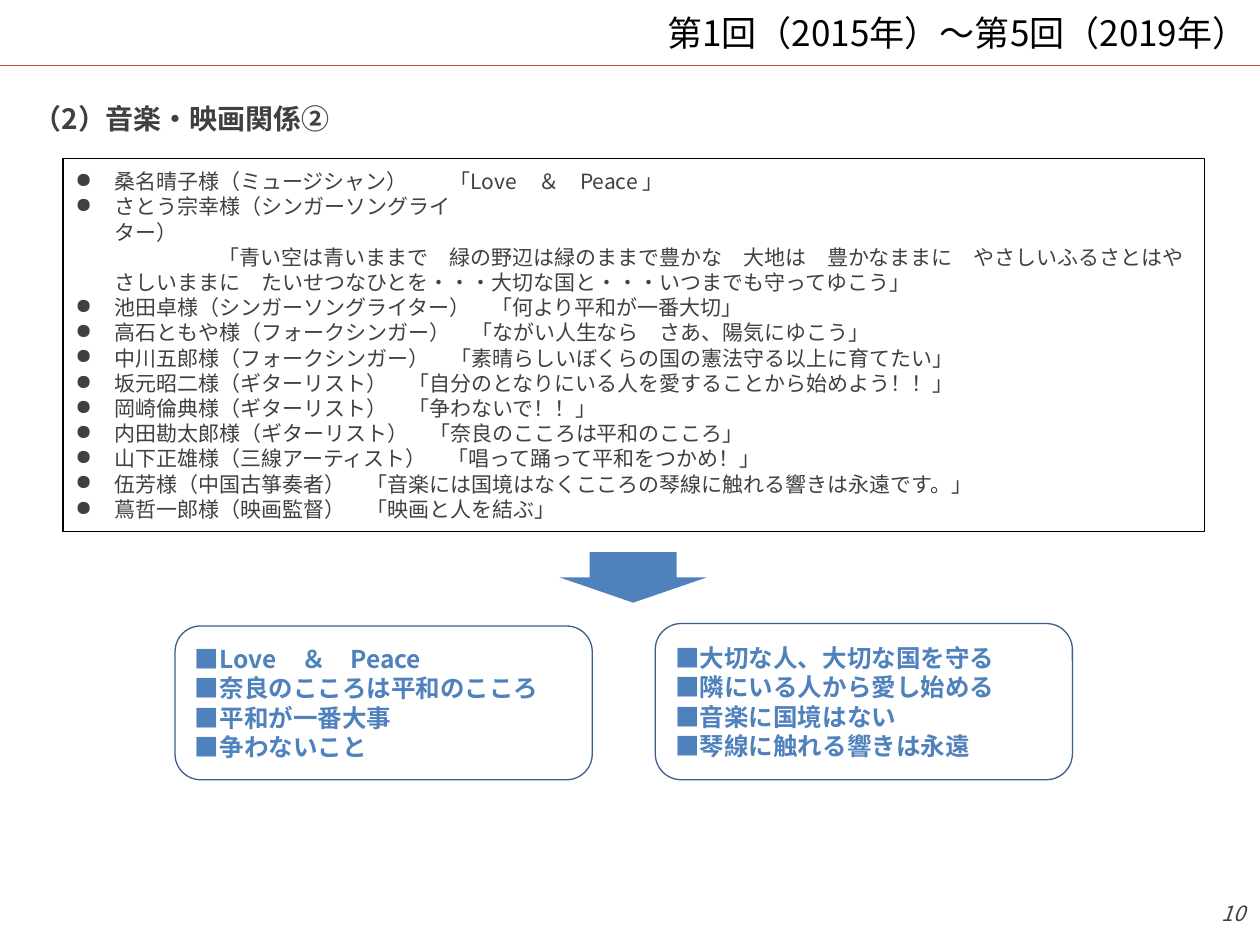
from dataclasses import dataclass

from lxml.etree import SubElement
from pptx import Presentation
from pptx.dml.color import RGBColor
from pptx.enum.shapes import MSO_CONNECTOR, MSO_SHAPE
from pptx.enum.text import MSO_ANCHOR, PP_ALIGN
from pptx.oxml import parse_xml
from pptx.oxml.ns import nsdecls, qn
from pptx.util import Cm, Pt


@dataclass(frozen=True)
class Theme:
    font: str = "Noto Sans CJK JP"
    black: RGBColor = RGBColor(0x00, 0x00, 0x00)
    gray: RGBColor = RGBColor(0x40, 0x40, 0x40)
    blue: RGBColor = RGBColor(0x4F, 0x81, 0xBD)
    navy: RGBColor = RGBColor(0x3A, 0x5F, 0x8C)
    red: RGBColor = RGBColor(0xBF, 0x4C, 0x48)
    title: int = 20
    heading: int = 16
    summary: int = 14
    body: int = 12
    rule: float = 0.75
    leading: float = 1.2


THEME = Theme()


def write(frame, lines, size, color, align=PP_ALIGN.LEFT, bold=False, italic=False):
    """Fill a text frame with one paragraph per line."""
    frame.word_wrap = True
    frame.text = "\n".join(lines)
    for paragraph in frame.paragraphs:
        paragraph.alignment = align
        paragraph.line_spacing = Pt(size * THEME.leading)
        font = paragraph.font
        font.name, font.size = THEME.font, Pt(size)
        font.bold, font.italic = bold, italic
        font.color.rgb = color
        east_asian = SubElement(paragraph._p.pPr.find(qn("a:defRPr")), qn("a:ea"))
        east_asian.set("typeface", THEME.font)


def outlined(kind, left, top, width, height, color):
    """Add an unfilled shape with a thin outline."""
    box = slide.shapes.add_shape(kind, Cm(left), Cm(top), Cm(width), Cm(height))
    box.shadow.inherit = False
    box.fill.background()
    box.line.color.rgb = color
    box.line.width = Pt(THEME.rule)
    box.text_frame.vertical_anchor = MSO_ANCHOR.MIDDLE
    return box


prs = Presentation()
prs.slide_width, prs.slide_height = Cm(25.4), Cm(19.05)
slide = prs.slides.add_slide(prs.slide_layouts[6])

# Header rule
header_rule = slide.shapes.add_connector(
    MSO_CONNECTOR.STRAIGHT, Cm(0), Cm(1.32), prs.slide_width, Cm(1.32))
header_rule.line.color.rgb = THEME.red
header_rule.line.width = Pt(THEME.rule)
SubElement(header_rule._element.spPr, qn("a:effectLst"))

# Page number
page_number = slide.shapes.add_textbox(Cm(19.43), Cm(18.03), Cm(5.92), Cm(1.02))
write(page_number.text_frame, ["10"], THEME.body, THEME.gray, PP_ALIGN.RIGHT, italic=True)

# Messages, with the long quotation on its own indented line
QUOTE_LINE = "「青い空は青いままで　緑の野辺は緑のままで豊かな　大地は　豊かなままに　やさしいふるさとはやさしいままに　たいせつなひとを・・・大切な国と・・・いつまでも守ってゆこう」"
MESSAGES = [
    "桑名晴子様（ミュージシャン）\t「Love　＆　Peace 」",
    "さとう宗幸様（シンガーソングライ\vター）",
    QUOTE_LINE,
    "池田卓様（シンガーソングライター）　「何より平和が一番大切」",
    "高石ともや様（フォークシンガー）　「ながい人生なら　さあ、陽気にゆこう」",
    "中川五郎様（フォークシンガー）　「素晴らしいぼくらの国の憲法守る以上に育てたい」",
    "坂元昭二様（ギターリスト）　「自分のとなりにいる人を愛することから始めよう！！」",
    "岡崎倫典様（ギターリスト）　「争わないで！！」",
    "内田勘太郎様（ギターリスト）　「奈良のこころは平和のこころ」",
    "山下正雄様（三線アーティスト）　「唱って踊って平和をつかめ！」",
    "伍芳様（中国古箏奏者）　「音楽には国境はなくこころの琴線に触れる響きは永遠です。」",
    "蔦哲一郎様（映画監督）　「映画と人を結ぶ」",
]
messages = outlined(MSO_SHAPE.RECTANGLE, 1.27, 3.2, 23.01, 7.52, THEME.black)
write(messages.text_frame, MESSAGES, THEME.body, THEME.gray)
for message, paragraph in zip(MESSAGES, messages.text_frame.paragraphs):
    quoted = message == QUOTE_LINE
    props = paragraph._p.pPr
    props.set("marL", str(Cm(0.79)))
    props.set("indent", str(Cm(2.1 if quoted else -0.79)))
    bullet = "<a:buNone %s/>" if quoted else '<a:buChar %s char="●"/>'
    tabs = '<a:tabLst %s><a:tab pos="{}" algn="l"/></a:tabLst>'.format(Cm(7.55))
    for markup in (bullet, tabs):
        props.find(qn("a:defRPr")).addprevious(parse_xml(markup % nsdecls("a")))

# Section heading
heading = slide.shapes.add_textbox(Cm(0.43), Cm(1.93), Cm(13.31), Cm(0.99))
write(heading.text_frame, ["（2）音楽・映画関係②"], THEME.heading, THEME.gray, bold=True)

# Summary boxes
SUMMARIES = [
    (3.53, 12.62, 3.1,
     ["■Love　＆　Peace", "■奈良のこころは平和のこころ", "■平和が一番大事", "■争わないこと"]),
    (13.21, 12.57, 3.15,
     ["■大切な人、大切な国を守る", "■隣にいる人から愛し始める", "■音楽に国境はない", "■琴線に触れる響きは永遠"]),
]
for left, top, height, points in SUMMARIES:
    summary = outlined(MSO_SHAPE.ROUNDED_RECTANGLE, left, top, 8.41, height, THEME.navy)
    write(summary.text_frame, points, THEME.summary, THEME.blue, bold=True)

# Arrow from the messages to the summaries
arrow = slide.shapes.add_shape(
    MSO_SHAPE.DOWN_ARROW, Cm(11.28), Cm(11.13), Cm(2.97), Cm(1.02))
arrow.adjustments[0], arrow.adjustments[1] = 0.59, 0.5
arrow.shadow.inherit = False
arrow.fill.solid()
arrow.fill.fore_color.rgb = THEME.blue
arrow.line.fill.background()

# Title
title = slide.shapes.add_textbox(Cm(0), Cm(0), prs.slide_width, Cm(1.32))
title.text_frame.vertical_anchor = MSO_ANCHOR.MIDDLE
write(title.text_frame, ["第1回（2015年）～第5回（2019年）"], THEME.title, THEME.black, PP_ALIGN.RIGHT)

prs.save("out.pptx")
